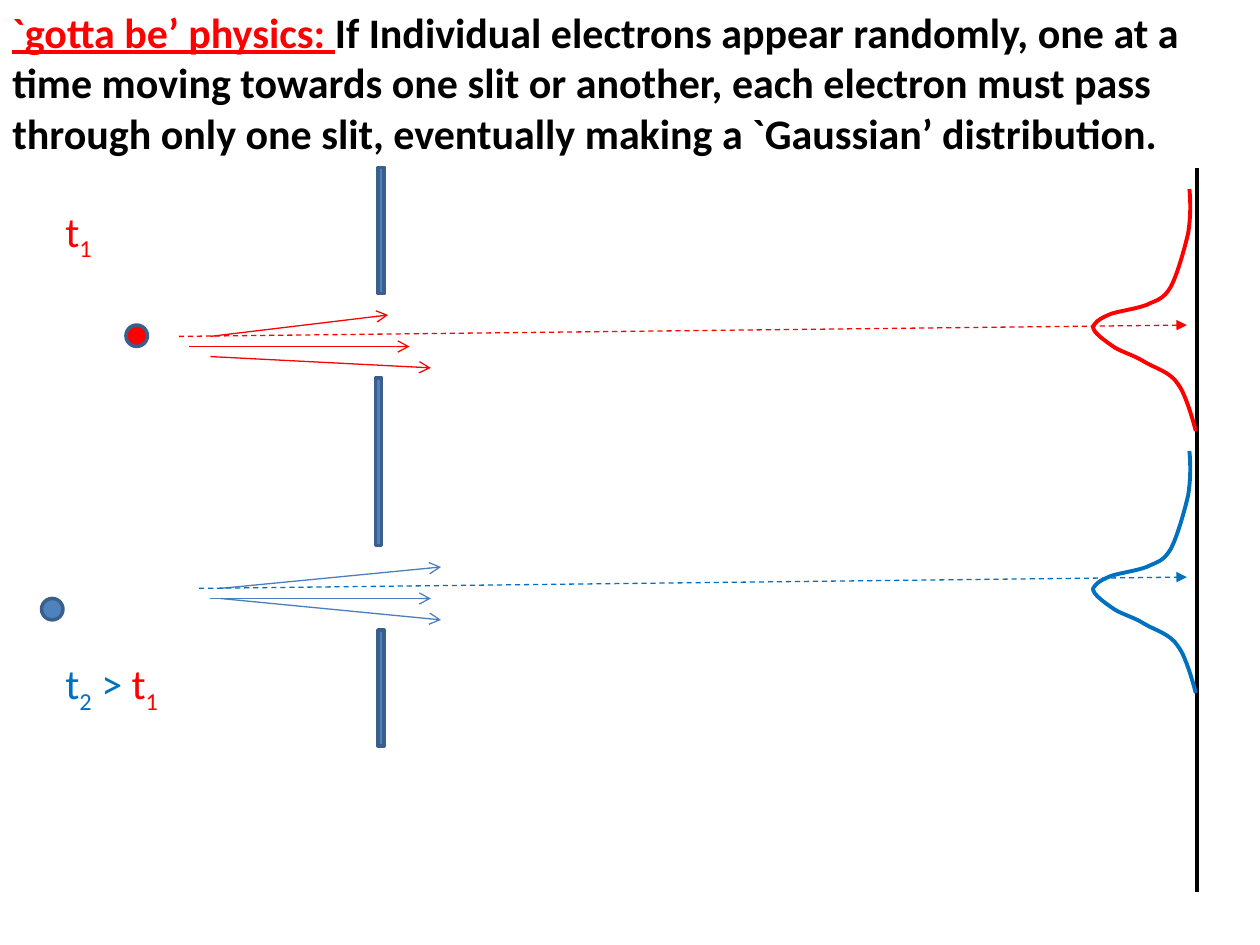
"""Build the two-slit electron slide with its expected Gaussian distributions."""
from lxml.etree import SubElement
from pptx import Presentation
from pptx.dml.color import RGBColor
from pptx.enum.dml import MSO_LINE
from pptx.enum.shapes import MSO_CONNECTOR, MSO_SHAPE
from pptx.enum.text import MSO_AUTO_SIZE
from pptx.oxml.ns import qn
from pptx.util import Inches, Pt


class Theme:
    font = "Calibri"
    text_size = Pt(24)
    red = RGBColor(0xFF, 0x00, 0x00)
    blue = RGBColor(0x00, 0x70, 0xC0)
    steel = RGBColor(0x4F, 0x81, 0xBD)
    steel_edge = RGBColor(0x3A, 0x5F, 0x8C)
    steel_ray = RGBColor(0x4B, 0x7E, 0xBC)
    black = RGBColor(0x00, 0x00, 0x00)


def draw_line(start, end, color, width=0.75, head=None, dashed=False):
    points = [Inches(value) for value in (*start, *end)]
    ray = slide.shapes.add_connector(MSO_CONNECTOR.STRAIGHT, *points)
    ray.line.color.rgb = color
    ray.line.width = Pt(width)
    if dashed:
        ray.line.dash_style = MSO_LINE.DASH
    properties = ray._element.spPr
    if head:
        SubElement(properties.find(qn("a:ln")), qn("a:tailEnd"), type=head)
    SubElement(properties, qn("a:effectLst"))


def write_text(box, pieces, bold=False):
    label = slide.shapes.add_textbox(*[Inches(value) for value in box])
    frame = label.text_frame
    frame.word_wrap = True
    frame.auto_size = MSO_AUTO_SIZE.SHAPE_TO_FIT_TEXT
    for text, color, style in pieces:
        run = frame.paragraphs[0].add_run()
        run.text = text
        run.font.name = Theme.font
        run.font.size = Theme.text_size
        run.font.bold = bold
        run.font.color.rgb = color
        if style == "underline":
            run.font.underline = True
        elif style == "subscript":
            run.font._element.set("baseline", "-25000")


presentation = Presentation()
presentation.slide_width = Inches(10)
presentation.slide_height = Inches(7.5)
slide = presentation.slides.add_slide(presentation.slide_layouts[6])

barriers_and_electrons = [
    (MSO_SHAPE.RECTANGLE, (3, 1.33, 0.05, 1), Theme.steel),
    (MSO_SHAPE.RECTANGLE, (2.98, 3, 0.05, 1.33), Theme.steel),
    (MSO_SHAPE.RECTANGLE, (3, 5, 0.05, 0.92), Theme.steel),
    (MSO_SHAPE.OVAL, (1, 2.58, 0.17, 0.17), Theme.red),
    (MSO_SHAPE.OVAL, (0.33, 4.75, 0.17, 0.17), Theme.steel),
]
for kind, box, color in barriers_and_electrons:
    body = slide.shapes.add_shape(kind, *[Inches(value) for value in box])
    body.shadow.inherit = False
    body.fill.solid()
    body.fill.fore_color.rgb = color
    body.line.color.rgb = Theme.steel_edge
    body.line.width = Pt(2)

write_text((0, 0, 9.5, 1.31), [
    ("`gotta be’ physics: ", Theme.red, "underline"),
    ("If Individual electrons appear randomly, one at a time moving towards "
     "one slit or another, each electron must pass through only one slit, "
     "eventually making a `Gaussian’ distribution.", Theme.black, None),
], bold=True)

slit_rays = [
    ((1.5, 2.75), (3.25, 2.75), Theme.red),
    ((1.67, 2.83), (3.42, 2.92), Theme.red),
    ((1.67, 2.67), (3.08, 2.5), Theme.red),
    ((1.67, 4.75), (3.42, 4.75), Theme.steel_ray),
    ((1.75, 4.67), (3.5, 4.5), Theme.steel_ray),
    ((1.75, 4.75), (3.5, 4.92), Theme.steel_ray),
]
for start, end, color in slit_rays:
    draw_line(start, end, color, head="arrow")

draw_line((1.42, 2.67), (9.42, 2.58), Theme.red, head="triangle", dashed=True)
draw_line((1.58, 4.67), (9.42, 4.58), Theme.blue, head="triangle", dashed=True)
draw_line((9.5, 1.33), (9.5, 7.08), Theme.black, width=2.5)

bell_start = (9.44, 1.5)
bell_controls = [
    (9.45, 1.61), (9.45, 1.72), (9.43, 1.85),
    (9.4, 1.98), (9.34, 2.19), (9.29, 2.28),
    (9.23, 2.38), (9.18, 2.38), (9.1, 2.42),
    (9.02, 2.45), (8.88, 2.47), (8.82, 2.49),
    (8.75, 2.52), (8.71, 2.54), (8.69, 2.57),
    (8.67, 2.59), (8.67, 2.6), (8.69, 2.63),
    (8.72, 2.67), (8.79, 2.72), (8.85, 2.76),
    (8.92, 2.8), (9, 2.82), (9.08, 2.87),
    (9.16, 2.92), (9.29, 2.95), (9.35, 3.05),
    (9.42, 3.14), (9.49, 3.42), (9.49, 3.42),
]
for drop, color in [(0, Theme.red), (2.08, Theme.blue)]:
    outline = slide.shapes.build_freeform(Inches(bell_start[0]), Inches(bell_start[1] + drop))
    outline.add_line_segments([(Inches(x), Inches(y + drop)) for x, y in bell_controls], close=False)
    bell = outline.convert_to_shape()
    bell.shadow.inherit = False
    bell.fill.background()
    bell.line.color.rgb = color
    bell.line.width = Pt(2.25)
    curve = next(bell._element.iter(qn("a:path")))
    segments = curve.findall(qn("a:lnTo"))
    for first in range(0, len(segments), 3):
        bezier = SubElement(curve, qn("a:cubicBezTo"))
        for segment in segments[first:first + 3]:
            bezier.append(segment[0])
            curve.remove(segment)

write_text((0.42, 1.58, 0.5, 0.5), [("t", Theme.red, None), ("1", Theme.red, "subscript")])
write_text((0.42, 5.17, 1.08, 0.5), [
    ("t", Theme.blue, None),
    ("2", Theme.blue, "subscript"),
    (" > ", Theme.blue, None),
    ("t", Theme.red, None),
    ("1", Theme.red, "subscript"),
])

presentation.save("out.pptx")
